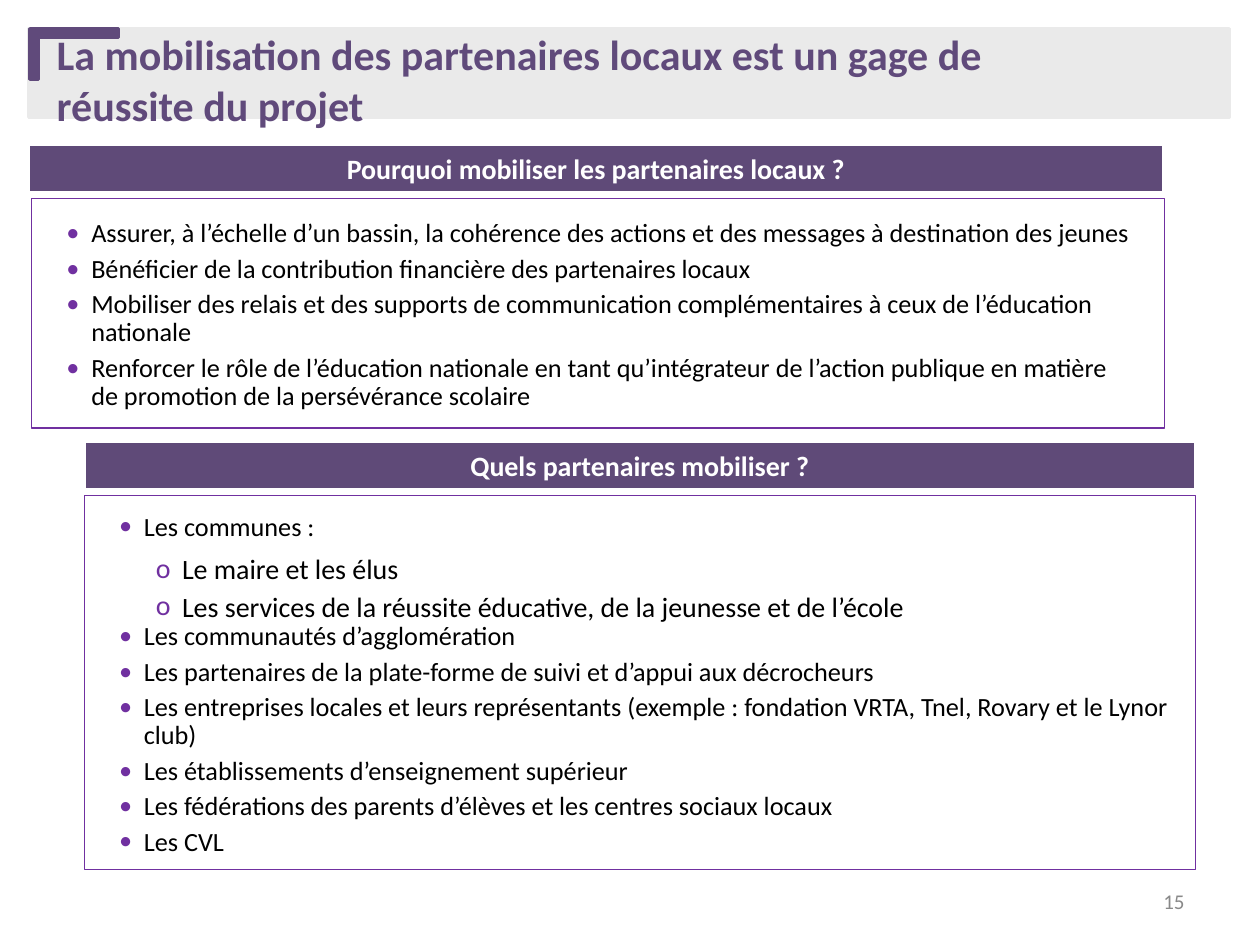
from lxml import etree
from pptx import Presentation
from pptx.dml.color import RGBColor
from pptx.enum.shapes import MSO_SHAPE
from pptx.enum.text import MSO_ANCHOR, MSO_AUTO_SIZE, PP_ALIGN
from pptx.oxml.ns import qn
from pptx.util import Cm, Pt

RECTANGLE, CORNER = MSO_SHAPE.RECTANGLE, MSO_SHAPE.CORNER
MIDDLE, NO_FIT = MSO_ANCHOR.MIDDLE, MSO_AUTO_SIZE.NONE
LEFT, CENTER, RIGHT, JUSTIFY = (PP_ALIGN.LEFT, PP_ALIGN.CENTER,
                                PP_ALIGN.RIGHT, PP_ALIGN.JUSTIFY)
FONT = "Calibri"
COLORS = {
    "band": "EAEAEA", "title": "604A7B", "heading": "5F4A78",
    "accent": "7030A0", "text": "000000", "white": "FFFFFF", "number": "898989",
}
COMPARISON_LAYOUT = 4
MAIN, SUB = 0, 1

REASONS = [
    (MAIN, "Assurer, à l’échelle d’un bassin, la cohérence des actions et des messages à destination des jeunes"),
    (MAIN, "Bénéficier de la contribution financière des partenaires locaux"),
    (MAIN, "Mobiliser des relais et des supports de communication complémentaires à ceux de l’éducation nationale"),
    (MAIN, "Renforcer le rôle de l’éducation nationale en tant qu’intégrateur de l’action publique en matière de promotion de la persévérance scolaire"),
]
PARTNERS = [
    (MAIN, "Les communes :"),
    (SUB, "Le maire et les élus"),
    (SUB, "Les services de la réussite éducative, de la jeunesse et de l’école"),
    (MAIN, "Les communautés d’agglomération"),
    (MAIN, "Les partenaires de la plate-forme de suivi et d’appui aux décrocheurs"),
    (MAIN, "Les entreprises locales et leurs représentants (exemple : fondation VRTA, Tnel, Rovary et le Lynor club)"),
    (MAIN, "Les établissements d’enseignement supérieur"),
    (MAIN, "Les fédérations des parents d’élèves et les centres sociaux locaux"),
    (MAIN, "Les CVL"),
]


def rgb(name):
    return RGBColor.from_string(COLORS[name])


def place(shape, left, top, width, height):
    shape.left, shape.top = Cm(left), Cm(top)
    shape.width, shape.height = Cm(width), Cm(height)


def paint(shape, fill, line, weight):
    if fill:
        shape.fill.solid()
        shape.fill.fore_color.rgb = rgb(fill)
    else:
        shape.fill.background()
    shape.line.color.rgb = rgb(line)
    shape.line.width = Pt(weight)


def prepare_frame(shape):
    frame = shape.text_frame
    frame.word_wrap = True
    frame.auto_size = NO_FIT
    frame.vertical_anchor = MIDDLE
    return frame


def format_runs(paragraph, size, color, bold=False):
    for run in paragraph.runs:
        run.font.name, run.font.size, run.font.bold = FONT, Pt(size), bold
        run.font.color.rgb = rgb(color)


def write_line(shape, wording, size, color, align, bold=False):
    frame = prepare_frame(shape)
    frame.text = wording
    paragraph = frame.paragraphs[0]
    paragraph.alignment = align
    paragraph.space_before = Pt(0)
    format_runs(paragraph, size, color, bold)


def set_bullet(paragraph, char, margin, hanging):
    properties = paragraph._p.get_or_add_pPr()
    properties.set("marL", str(Cm(margin)))
    properties.set("indent", str(-Cm(hanging)))
    color = etree.SubElement(properties, qn("a:buClr"))
    etree.SubElement(color, qn("a:srgbClr"), val=COLORS["accent"])
    etree.SubElement(properties, qn("a:buFont"), typeface=FONT)
    etree.SubElement(properties, qn("a:buChar"), char=char)


def write_list(shape, items):
    frame = prepare_frame(shape)
    frame.margin_left, frame.margin_top = Cm(0.7), Cm(0.2)
    frame.margin_right, frame.margin_bottom = Cm(0.5), Cm(0.1)
    frame.text = "\n".join(wording for _, wording in items)
    for paragraph, (rank, _) in zip(frame.paragraphs, items):
        is_sub = rank == SUB
        paragraph.level = 1
        paragraph.line_spacing = 0.9
        paragraph.space_before = Pt(4 if is_sub else 0)
        paragraph.space_after = Pt(0 if is_sub else 4)
        paragraph.alignment = JUSTIFY if is_sub else LEFT
        format_runs(paragraph, 16 if is_sub else 15, "text")
        if is_sub:
            set_bullet(paragraph, "o", 1.27, 0.53)
        else:
            set_bullet(paragraph, "•", 0.5, 0.5)


def add_title_band(slide, left, top, width, height):
    band = slide.shapes.add_shape(RECTANGLE, 0, 0, 0, 0)
    place(band, left, top, width, height)
    paint(band, "band", "band", 2)
    band.shadow.inherit = False
    slide.shapes._spTree.insert(2, band._element)  # behind the title

    title = slide.shapes.title
    place(title, left + 0.31, top + 0.08, 21.54, 1.88)
    write_line(title, "La mobilisation des partenaires locaux est un gage de réussite du projet",
               24, "title", LEFT, bold=True)

    corner = slide.shapes.add_shape(CORNER, 0, 0, 0, 0)
    place(corner, left + 0.41, top - 0.38, 1.02, 1.78)
    corner.rotation = 90
    corner.adjustments[0], corner.adjustments[1] = 0.16, 0.17
    paint(corner, "title", "title", 2)
    corner.shadow.inherit = False


def fill_section(heading, body, wording, items, left, top, width, height, body_shift=0):
    """Heading bar over a framed list; body_shift narrows the frame from the left."""
    place(heading, left, top, width, 0.99)
    paint(heading, "heading", "white", 2)
    write_line(heading, wording, 16, "white", CENTER, bold=True)

    place(body, left + body_shift, top + 1.1, width - body_shift, height - 1.1)
    paint(body, None, "accent", 0.75)
    write_list(body, items)


def add_page_number(slide, left, top, width, height):
    number = slide.shapes.add_textbox(0, 0, 0, 0)
    place(number, left, top, width, height)
    write_line(number, "15", 12, "number", RIGHT)


def main():
    deck = Presentation()
    deck.slide_width, deck.slide_height = Cm(25.4), Cm(19.05)
    slide = deck.slides.add_slide(deck.slide_layouts[COMPARISON_LAYOUT])
    _, why_heading, why_body, who_heading, who_body = slide.placeholders

    add_title_band(slide, 0.58, 0.58, 24.2, 1.78)
    fill_section(why_heading, why_body, "Pourquoi mobiliser les partenaires locaux ?",
                 REASONS, 0.56, 2.9, 22.91, 5.73, body_shift=0.08)
    fill_section(who_heading, who_body, "Quels partenaires mobiliser ?",
                 PARTNERS, 1.7, 8.89, 22.4, 8.64)
    add_page_number(slide, 18.21, 17.65, 5.92, 1.02)
    deck.save("out.pptx")


if __name__ == "__main__":
    main()
